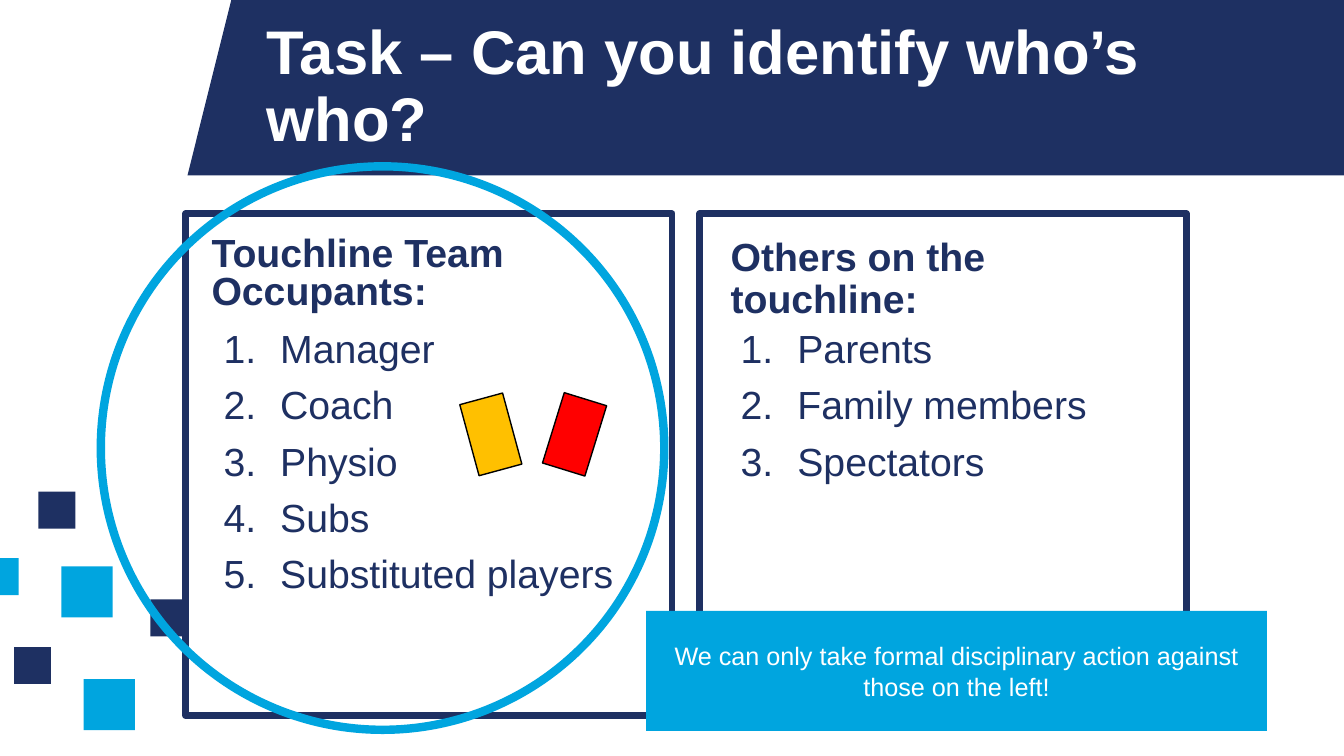
from pptx import Presentation
from pptx.dml.color import RGBColor
from pptx.enum.shapes import MSO_SHAPE
from pptx.enum.text import MSO_ANCHOR, PP_ALIGN
from pptx.oxml.ns import qn
from pptx.util import Pt
from lxml import etree

NAVY = RGBColor(0x1E, 0x30, 0x62)
SKY = RGBColor(0x00, 0xA5, 0xDF)
WHITE = RGBColor(0xFF, 0xFF, 0xFF)
BLACK = RGBColor(0x00, 0x00, 0x00)
RED = RGBColor(0xFF, 0x00, 0x00)
AMBER = RGBColor(0xFF, 0xC0, 0x00)

RECTANGLE = MSO_SHAPE.RECTANGLE
ELLIPSE = MSO_SHAPE.OVAL
PARALLELOGRAM = MSO_SHAPE.PARALLELOGRAM
TOP, MIDDLE = MSO_ANCHOR.TOP, MSO_ANCHOR.MIDDLE
LEFT, CENTER = PP_ALIGN.LEFT, PP_ALIGN.CENTER

FONT = "Arial"
LIST_INDENT = Pt(40.5)


def add_figure(slide, kind, box, fill=None, line=None, weight=1):
    """Add a flat preset shape; box is left, top, width, height in points."""
    shape = slide.shapes.add_shape(kind, *map(Pt, box))
    shape.shadow.inherit = False
    if fill is None:
        shape.fill.background()
    else:
        shape.fill.solid()
        shape.fill.fore_color.rgb = fill
    if line is None:
        shape.line.fill.background()
    else:
        shape.line.color.rgb = line
        shape.line.width = Pt(weight)
    return shape


def number_paragraph(para):
    properties = para._p.get_or_add_pPr()
    properties.set("marL", str(LIST_INDENT))
    properties.set("indent", str(-LIST_INDENT))
    bullet = etree.SubElement(properties, qn("a:buAutoNum"))
    bullet.set("type", "arabicPeriod")


def write(shape, lines, size, color, bold=False, spacing=1.0, anchor=TOP,
          align=LEFT, numbered=False):
    frame = shape.text_frame
    frame.word_wrap = True
    frame.vertical_anchor = anchor
    for index, line in enumerate(lines):
        para = frame.add_paragraph() if index else frame.paragraphs[0]
        if numbered:
            number_paragraph(para)
        para.alignment = align
        para.line_spacing = spacing
        if index:
            para.space_before = Pt(10)
        span = para.add_run()
        span.text = line
        span.font.name = FONT
        span.font.size = Pt(size)
        span.font.bold = bold
        span.font.color.rgb = color


def add_text(slide, box, lines, size, color, **style):
    write(slide.shapes.add_textbox(*map(Pt, box)), lines, size, color, **style)


def add_banner(slide, box, title):
    left, top, width, height = box
    add_figure(slide, PARALLELOGRAM, box, NAVY)
    add_text(slide, (left + 49.7, top + 10.8, 710.6, height - 20.9), [title],
             44, WHITE, bold=True, spacing=0.9, anchor=MIDDLE)


def add_squares(slide, left, top):
    """Scatter the decorative squares from the given corner."""
    small, large = 26.4, 36.5
    squares = [
        (23, 111, small, NAVY),
        (72.8, 133.9, large, SKY),
        (56.9, 53.3, large, SKY),
        (120.4, 77, small, NAVY),
        (0, 47.5, small, SKY),
        (40.4, 0, small, NAVY),
    ]
    for across, down, side, color in squares:
        add_figure(slide, RECTANGLE, (left + across, top + down, side, side), color)


def add_panel(slide, box, heading, people, heading_inset, list_inset, spacing):
    left, top, width, height = box
    add_figure(slide, RECTANGLE, box, WHITE, NAVY, 4.5)
    add_text(slide, (left + heading_inset, top + 13.7, 323, 64.8), [heading],
             28, NAVY, bold=True, spacing=spacing)
    add_text(slide, (left + list_inset, top + 79.2, 407, 290), people,
             28, NAVY, spacing=0.9, numbered=True)


def add_cards(slide, left, top):
    for across, angle, color in ((0, 344.8, AMBER), (59.8, 17.2, RED)):
        card = add_figure(slide, RECTANGLE, (left + across, top, 31.7, 52.6),
                          color, BLACK, 1)
        card.rotation = angle


def add_callout(slide, box, message):
    shape = add_figure(slide, RECTANGLE, box, SKY)
    write(shape, [message], 18, WHITE, anchor=MIDDLE, align=CENTER)


def main():
    deck = Presentation()
    deck.slide_width, deck.slide_height = Pt(960), Pt(540)
    page = deck.slides.add_slide(deck.slide_layouts[6])

    add_banner(page, (133.9, 0, 886.3, 125.3), "Task – Can you identify who’s who?")
    add_squares(page, -13, 351.2)
    add_panel(page, (499.7, 152.6, 347.8, 358.6), "Others on the touchline:",
              ["Parents", "Family members", "Spectators"], 15.1, 22.3, 0.9)
    add_panel(page, (132.5, 152.6, 347.8, 358.6), "Touchline Team Occupants:",
              ["Manager", "Coach", "Physio", "Subs", "Substituted players"],
              11.5, 20.1, 0.8)
    add_figure(page, ELLIPSE, (72, 118.8, 402.5, 402.5), line=SKY, weight=6)
    add_cards(page, 334.8, 284)
    add_callout(page, (461.5, 436.3, 443.5, 85.7),
                "We can only take formal disciplinary action against those on the left!")

    deck.save("out.pptx")


if __name__ == "__main__":
    main()
